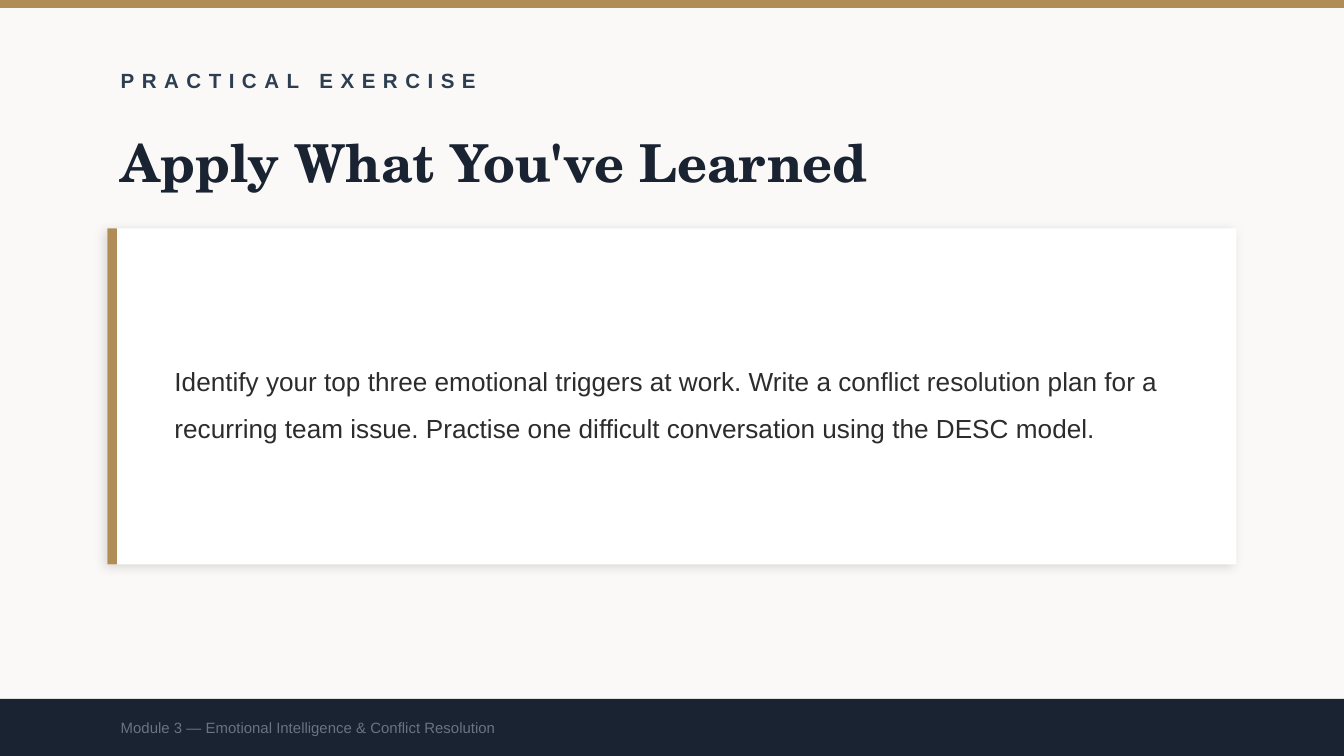
from dataclasses import dataclass

from lxml.etree import SubElement
from pptx import Presentation
from pptx.dml.color import RGBColor
from pptx.enum.shapes import MSO_SHAPE
from pptx.enum.text import MSO_ANCHOR, MSO_AUTO_SIZE, PP_ALIGN
from pptx.oxml.ns import qn
from pptx.util import Emu, Pt

SCALE = 4572  # EMU in one px, 200 px to the inch
WIDTH, HEIGHT = 2000, 1125
LEFT = 160  # shared left edge


@dataclass(frozen=True)
class Theme:
    paper: str = "FAF9F7"
    white: str = "FFFFFF"
    gold: str = "B08D57"
    navy: str = "1A2332"
    slate: str = "2C3E50"
    ink: str = "2C2C2C"
    gray: str = "6B7280"
    shade: str = "000000"
    sans: str = "Arial"
    serif: str = "TeX Gyre Schola"
    label: int = 11
    title: int = 28
    body: int = 14
    foot: int = 8


THEME = Theme()


def px(*sizes):
    return [Emu(size * SCALE) for size in sizes]


def add_rect(slide, box, color):
    rect = slide.shapes.add_shape(MSO_SHAPE.RECTANGLE, *px(*box))
    rect.shadow.inherit = False
    rect.fill.solid()
    rect.fill.fore_color.rgb = RGBColor.from_string(color)
    rect.line.fill.background()
    return rect


def add_shade(shape, blur, dist, angle, alpha):
    """Soft outer shadow: points, degrees and percent."""
    effects = shape._element.spPr.find(qn("a:effectLst"))
    outer = SubElement(effects, qn("a:outerShdw"), blurRad=str(Pt(blur)),
                       dist=str(Pt(dist)), dir=str(angle * 60000),
                       algn="bl", rotWithShape="0")
    tint = SubElement(outer, qn("a:srgbClr"), val=THEME.shade)
    SubElement(tint, qn("a:alpha"), val=str(alpha * 1000))


def set_text(shape, text, *, size, color, face=THEME.sans, bold=False,
             track=0, lead=None):
    frame = shape.text_frame
    frame.word_wrap = True
    frame.auto_size = MSO_AUTO_SIZE.NONE
    frame.vertical_anchor = MSO_ANCHOR.MIDDLE
    para = frame.paragraphs[0]
    para.alignment = PP_ALIGN.LEFT
    if lead:
        para.line_spacing = lead
    run = para.add_run()
    run.text = text
    font = run.font
    font.name, font.size, font.bold = face, Pt(size), bold
    font.color.rgb = RGBColor.from_string(color)
    if track:
        run._r.get_or_add_rPr().set("spc", str(track * 100))


def add_text(slide, box, text, **style):
    set_text(slide.shapes.add_textbox(*px(*box)), text, **style)


def add_title(slide, box, text, **style):
    title = slide.shapes.title
    title.left, title.top, title.width, title.height = px(*box)
    set_text(title, text, **style)


def add_card(slide, box, text):
    left, top, width, height = box
    add_shade(add_rect(slide, box, THEME.white), 6, 2, 135, 12)
    add_rect(slide, (left, top, 14, height), THEME.gold)
    add_text(slide, (left + 80, top + 40, width - 140, height - 80), text,
             size=THEME.body, color=THEME.ink, lead=1.5)


def add_foot(slide, text):
    top, tall = 1040, HEIGHT - 1040
    add_rect(slide, (0, top, WIDTH, tall), THEME.navy)
    add_text(slide, (LEFT, top, 1600, tall), text,
             size=THEME.foot, color=THEME.gray)


def main():
    deck = Presentation()
    deck.slide_width, deck.slide_height = px(WIDTH, HEIGHT)
    slide = deck.slides.add_slide(deck.slide_layouts[5])  # Title Only
    slide.background.fill.solid()
    slide.background.fill.fore_color.rgb = RGBColor.from_string(THEME.paper)

    # Top band and headings
    add_rect(slide, (0, 0, WIDTH, 12), THEME.gold)
    add_text(slide, (LEFT, 80, 1600, 80), "PRACTICAL EXERCISE",
             size=THEME.label, color=THEME.slate, bold=True, track=4)
    add_title(slide, (LEFT, 180, 1600, 120), "Apply What You've Learned",
              size=THEME.title, color=THEME.navy, face=THEME.serif, bold=True)

    # Exercise card
    add_card(slide, (LEFT, 340, 1680, 500),
             "Identify your top three emotional triggers at work. "
             "Write a conflict resolution plan for a recurring team issue. "
             "Practise one difficult conversation using the DESC model.")

    # Footer
    add_foot(slide, "Module 3 — Emotional Intelligence & Conflict Resolution")
    deck.save("out.pptx")


if __name__ == "__main__":
    main()
